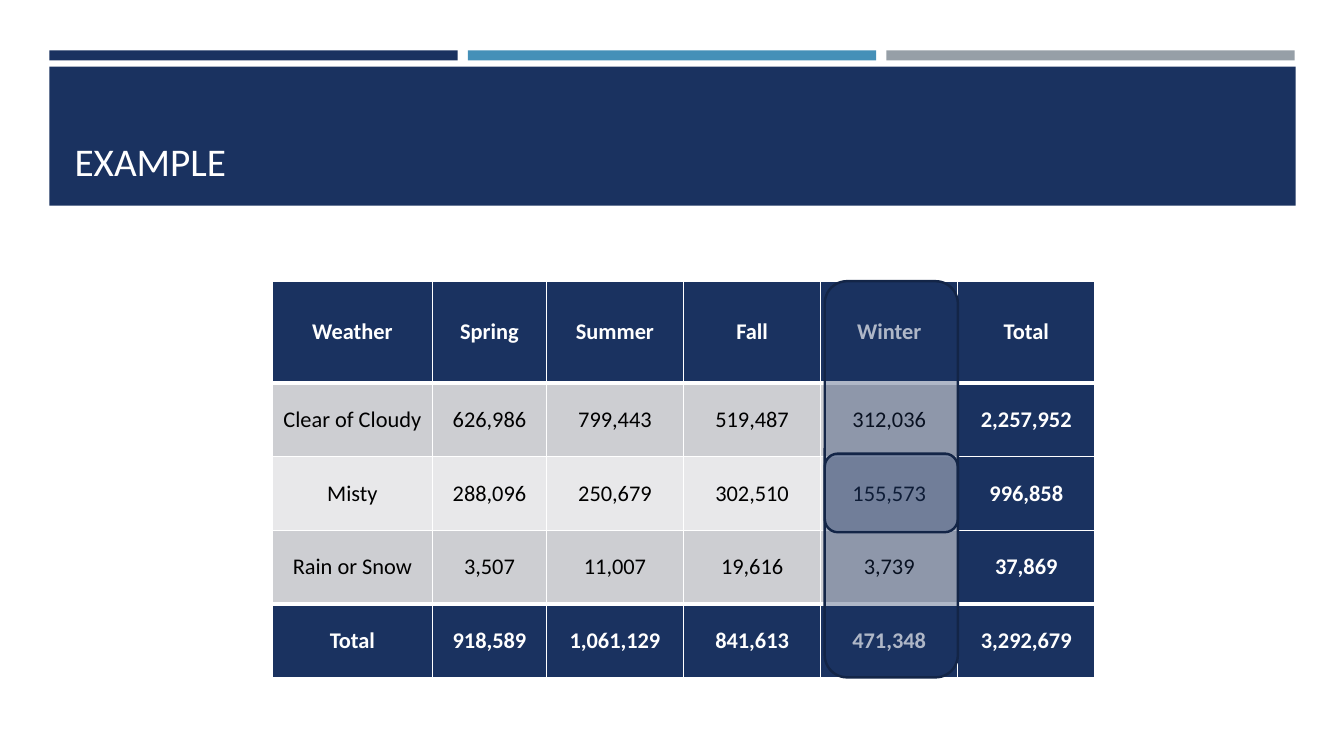
from dataclasses import dataclass

from lxml import etree
from pptx import Presentation
from pptx.dml.color import RGBColor
from pptx.enum import shapes, text
from pptx.oxml import ns
from pptx.util import Inches, Pt


@dataclass(frozen=True)
class Theme:
    font: str = "Calibri"
    title_size: int = 28
    table_size: int = 16
    navy: str = "1A3260"
    blue: str = "4590B8"
    grey: str = "969FA7"
    outline: str = "132547"
    band_dark: str = "CDCED2"
    band_light: str = "E8E8EA"
    white: str = "FFFFFF"
    black: str = "000000"


THEME = Theme()

ROWS = [
    ["Weather", "Spring", "Summer", "Fall", "Winter", "Total"],
    ["Clear of Cloudy", "626,986", "799,443", "519,487", "312,036", "2,257,952"],
    ["Misty", "288,096", "250,679", "302,510", "155,573", "996,858"],
    ["Rain or Snow", "3,507", "11,007", "19,616", "3,739", "37,869"],
    ["Total", "918,589", "1,061,129", "841,613", "471,348", "3,292,679"],
]
COL_WIDTHS = [1.59, 1.13, 1.36, 1.36, 1.36, 1.36]
ROW_HEIGHTS = [1.01, 0.73, 0.73, 0.73, 0.73]
TABLE_LEFT, TABLE_TOP = 2.7, 2.79


def rgb(value):
    return RGBColor.from_string(value)


def style_font(font, size, color, bold=False):
    font.name = THEME.font
    font.size = Pt(size)
    font.bold = bold
    font.color.rgb = rgb(color)


def add_block(slide, kind, left, top, width, height, color):
    """Add a filled shape without line or shadow."""
    sp = slide.shapes.add_shape(
        kind, Inches(left), Inches(top), Inches(width), Inches(height))
    sp.shadow.inherit = False
    sp.fill.solid()
    sp.fill.fore_color.rgb = rgb(color)
    sp.line.fill.background()
    return sp


def add_header(slide):
    rect = shapes.MSO_SHAPE.RECTANGLE
    for i, color in enumerate([THEME.navy, THEME.blue, THEME.grey]):
        add_block(slide, rect, 0.49 + i * 4.15, 0.5, 4.05, 0.1, color)
    add_block(slide, rect, 0.49, 0.66, 12.36, 1.38, THEME.navy)


def set_title(slide, words):
    """Fill the title and bring it in front of the header band."""
    title = slide.shapes.title
    title.left, title.top = Inches(0.64), Inches(0.8)
    title.width, title.height = Inches(12.06), Inches(1.08)
    tf = title.text_frame
    tf.text = words
    tf.vertical_anchor = text.MSO_ANCHOR.BOTTOM
    p = tf.paragraphs[0]
    p.alignment = text.PP_ALIGN.LEFT
    style_font(p.font, THEME.title_size, THEME.white)
    slide.shapes._spTree.append(title._element)


def set_borders(cell, top, bottom):
    """Draw white borders; top and bottom are widths in points."""
    tc_pr = cell._tc.get_or_add_tcPr()
    widths = {"L": 1, "R": 1, "T": top, "B": bottom}
    for i, (side, width) in enumerate(widths.items()):
        ln = etree.Element(ns.qn(f"a:ln{side}"), w=str(Pt(width)))
        fill = etree.SubElement(ln, ns.qn("a:solidFill"))
        etree.SubElement(fill, ns.qn("a:srgbClr"), val=THEME.white)
        tc_pr.insert(i, ln)


def fill_cell(cell, words, color, strong):
    cell.text = words
    cell.vertical_anchor = text.MSO_ANCHOR.MIDDLE
    cell.margin_left = cell.margin_right = Inches(0.07)
    cell.fill.solid()
    cell.fill.fore_color.rgb = rgb(color)
    p = cell.text_frame.paragraphs[0]
    p.alignment = text.PP_ALIGN.CENTER
    style_font(p.font, THEME.table_size,
               THEME.white if strong else THEME.black, strong)


def add_weather_table(slide):
    table = slide.shapes.add_table(
        len(ROWS), len(COL_WIDTHS), Inches(TABLE_LEFT), Inches(TABLE_TOP),
        Inches(sum(COL_WIDTHS)), Inches(sum(ROW_HEIGHTS))).table
    table.last_row = table.last_col = True
    for column, width in zip(table.columns, COL_WIDTHS):
        column.width = Inches(width)
    for row, height in zip(table.rows, ROW_HEIGHTS):
        row.height = Inches(height)

    last_row, last_col = len(ROWS) - 1, len(COL_WIDTHS) - 1
    for r, values in enumerate(ROWS):
        band = THEME.band_dark if r % 2 else THEME.band_light
        top = 3 if r in (1, last_row) else 1
        bottom = 3 if r in (0, last_row - 1) else 1
        for c, words in enumerate(values):
            strong = r in (0, last_row) or c == last_col
            cell = table.cell(r, c)
            fill_cell(cell, words, THEME.navy if strong else band, strong)
            set_borders(cell, top, bottom)


def add_highlight(slide, top, height):
    """Lay a see-through rounded frame over the Winter column."""
    sp = add_block(slide, shapes.MSO_SHAPE.ROUNDED_RECTANGLE,
                   8.18, top, 1.32, height, THEME.navy)
    color = sp._element.spPr.find(ns.qn("a:solidFill"))[0]
    etree.SubElement(color, ns.qn("a:alpha"), val="35000")
    sp.line.color.rgb = rgb(THEME.outline)
    sp.line.width = Pt(1.75)


def main():
    prs = Presentation()
    prs.slide_width, prs.slide_height = Inches(13.33), Inches(7.5)
    slide = prs.slides.add_slide(prs.slide_layouts.get_by_name("Title Only"))
    add_header(slide)
    set_title(slide, "EXAMPLE")
    add_weather_table(slide)
    add_highlight(slide, TABLE_TOP, sum(ROW_HEIGHTS))
    add_highlight(slide, 4.5, 0.78)
    prs.save("out.pptx")


if __name__ == "__main__":
    main()
